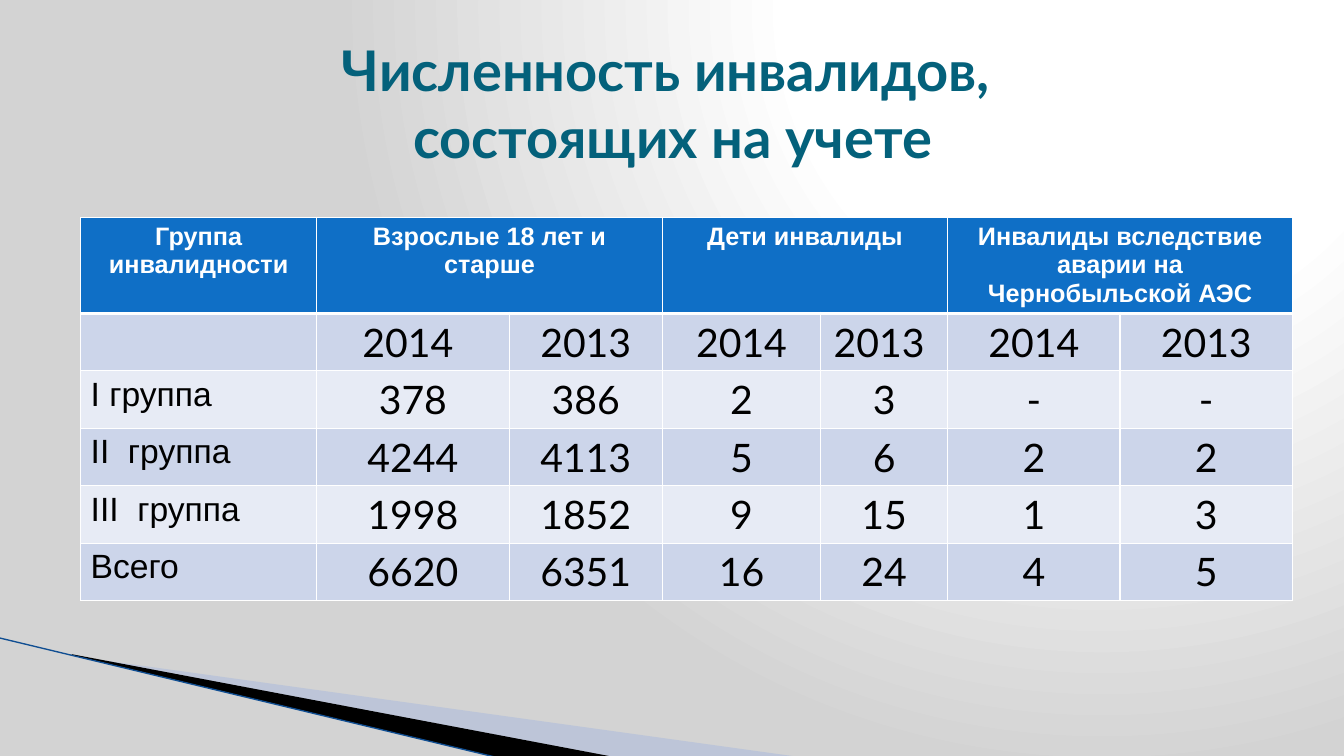
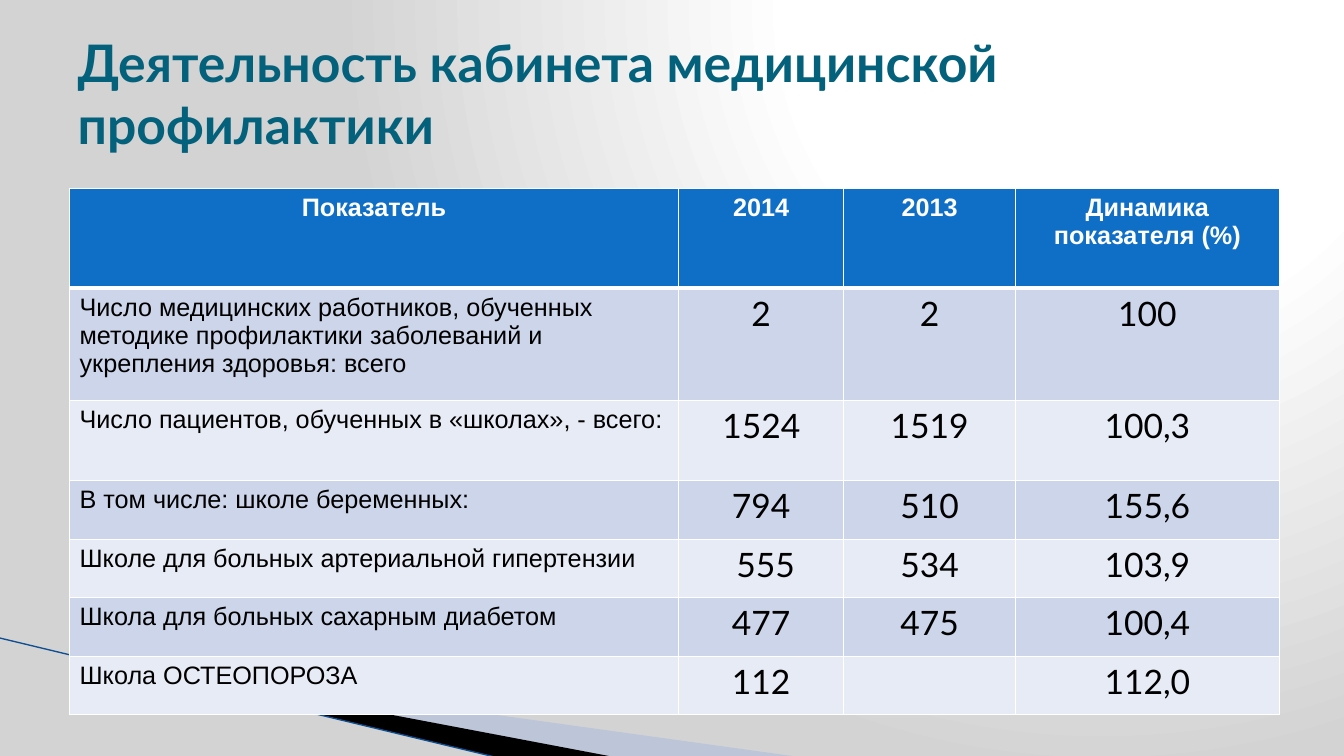
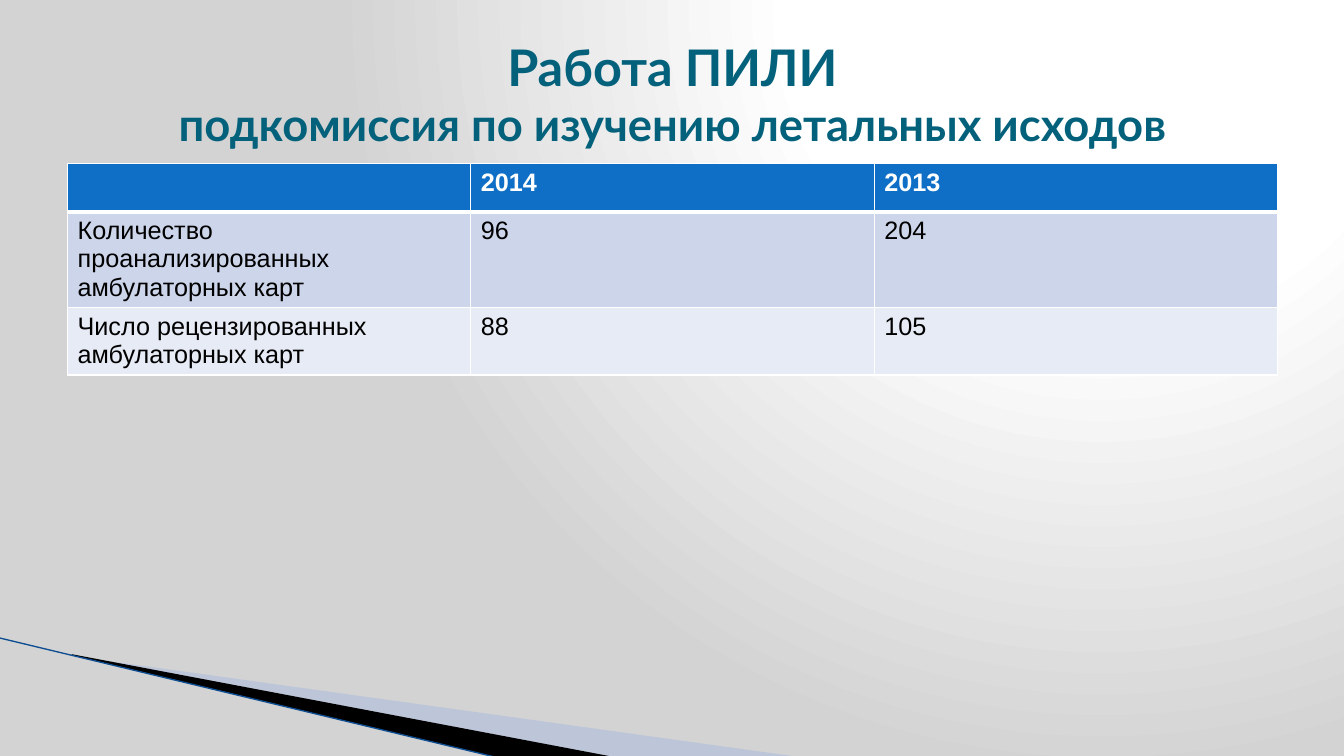
from lxml import etree
from pptx import Presentation
from pptx.dml.color import RGBColor
from pptx.enum.shapes import MSO_CONNECTOR
from pptx.enum.text import MSO_ANCHOR, MSO_AUTO_SIZE, PP_ALIGN
from pptx.oxml import parse_xml
from pptx.oxml.ns import nsdecls, qn
from pptx.util import Inches, Pt

LEFT, CENTER = PP_ALIGN.LEFT, PP_ALIGN.CENTER
MIDDLE = MSO_ANCHOR.MIDDLE
NO_FIT = MSO_AUTO_SIZE.NONE
STRAIGHT = MSO_CONNECTOR.STRAIGHT

HEADING, BODY = "Lato", "Arial"
TEAL, BLUE, BLACK, WHITE = "04617B", "0F6FC6", "000000", "FFFFFF"
PALE_BLUE, LINE_BLUE, GREY = "9DB2E1", "104E92", "D3D3D3"
BANDS = ["CCD5EA", "E7EBF5"]
TITLE_ONLY = 5


def rgb(color):
    return RGBColor.from_string(color)


def text_format(size, name=BODY, color=BLACK, bold=False):
    return {"size": Pt(size), "name": name, "color": color, "bold": bold}


def set_font(font, fmt):
    for key, value in fmt.items():
        if key == "color":
            font.color.rgb = rgb(value)
        else:
            setattr(font, key, value)


HEADER = text_format(18, color=WHITE, bold=True)
LABEL = text_format(18)


class Deck:
    """Shared style and the slide being built."""

    def __init__(self):
        self.prs = Presentation()
        self.prs.slide_width = Inches(13.33)
        self.prs.slide_height = Inches(7.5)
        self.layout = self.prs.slide_layouts[TITLE_ONLY]
        self.s = None
        self.background()

    def background(self):
        master = self.prs.slide_master
        master.background.fill.solid()
        solid = master.element.find(".//" + qn("p:bgPr") + "/" + qn("a:solidFill"))
        stops = "".join(
            f'<a:gs pos="{pos * 1000}"><a:srgbClr val="{color}"/></a:gs>'
            for pos, color in [(0, WHITE), (40, WHITE), (100, GREY)])
        gradient = parse_xml(
            f'<a:gradFill {nsdecls("a")} rotWithShape="1"><a:gsLst>{stops}</a:gsLst>'
            '<a:path path="circle"><a:fillToRect l="65000" b="98000"/></a:path>'
            '</a:gradFill>')
        solid.getparent().replace(solid, gradient)

    def slide(self, title_lines, title_height, align=CENTER):
        first = self.s is None
        self.s = self.prs.slides.add_slide(self.layout)
        if first:
            self.corner()
        self.title(title_lines, title_height, align)

    def title(self, lines, height, align):
        sp = self.s.shapes.title
        box = {"left": 0.67, "top": 0.3, "width": 12, "height": height}
        for key, value in box.items():
            setattr(sp, key, Inches(value))
        tf = sp.text_frame
        tf.word_wrap, tf.auto_size, tf.vertical_anchor = True, NO_FIT, MIDDLE
        p = tf.paragraphs[0]
        p.alignment = align
        for i, (text, size) in enumerate(lines):
            if i:
                p.add_line_break()
            r = p.add_run()
            r.text = text
            set_font(r.font, text_format(size, HEADING, TEAL, True))

    # Corner decoration, kept in the layout so that every slide shows it
    def corner(self):
        pale = self.wedge([(0.73, 6.51), (7.93, 7.51), (6.08, 7.51), (0.73, 6.5)],
                          PALE_BLUE, 40)
        dark = self.wedge([(0.71, 6.49), (6.09, 7.51), (4.96, 7.52), (0.72, 6.5)],
                          BLACK)
        edge = self.line((0, 6.33), (4.95, 7.52), LINE_BLUE, 0.95)
        tree = self.layout.element.cSld.spTree
        for number, sp in enumerate([pale, dark, edge], 101):
            sp.element.find(".//" + qn("p:cNvPr")).set("id", str(number))
            tree.append(sp.element)

    def wedge(self, points, color, opacity=100):
        points = [(Inches(x), Inches(y)) for x, y in points]
        builder = self.s.shapes.build_freeform(*points[0])
        builder.add_line_segments(points[1:], close=True)
        sp = builder.convert_to_shape()
        sp.shadow.inherit = False
        sp.line.fill.background()
        sp.fill.solid()
        sp.fill.fore_color.rgb = rgb(color)
        if opacity < 100:
            clr = sp.element.spPr.find(".//" + qn("a:srgbClr"))
            etree.SubElement(clr, qn("a:alpha")).set("val", str(opacity * 1000))
        return sp

    def line(self, start, end, color, width):
        ends = [Inches(v) for v in (*start, *end)]
        line = self.s.shapes.add_connector(STRAIGHT, *ends)
        line.line.color.rgb = rgb(color)
        line.line.width = Pt(width)
        etree.SubElement(line.element.spPr, qn("a:effectLst"))
        return line

    def table(self, left, top, widths, heights, rows, label=LABEL, value=LABEL,
              header_align=CENTER, value_align=CENTER):
        """None in a row joins the cell to the one on its left."""
        frame = self.s.shapes.add_table(
            len(rows), len(widths), Inches(left), Inches(top),
            Inches(sum(widths)), Inches(sum(heights)))
        table = frame.table
        for column, width in zip(table.columns, widths):
            column.width = Inches(width)
        for row, height in zip(table.rows, heights):
            row.height = Inches(height)
        for i, row in enumerate(rows):
            for j, text in enumerate(row):
                cell = table.cell(i, j)
                if i == 0:
                    fmt, align, fill = HEADER, header_align, BLUE
                else:
                    fmt, align = (value, value_align) if j else (label, LEFT)
                    fill = BANDS[(i - 1) % 2]
                self.cell(cell, fill, 3 if i == 0 else 1, 3 if i == 1 else 1)
                if text is None:
                    table.cell(i, j - 1).merge(cell)
                elif text:
                    p = cell.text_frame.paragraphs[0]
                    p.alignment = align
                    r = p.add_run()
                    r.text = text
                    set_font(r.font, fmt)

    def cell(self, cell, fill, bottom, top):
        tcPr = cell._tc.get_or_add_tcPr()
        for side, width in {"L": 1, "R": 1, "T": top, "B": bottom}.items():
            tcPr.append(parse_xml(
                f'<a:ln{side} {nsdecls("a")} w="{Pt(width)}"><a:solidFill>'
                f'<a:srgbClr val="{WHITE}"/></a:solidFill></a:ln{side}>'))
        cell.fill.solid()
        cell.fill.fore_color.rgb = rgb(fill)


def main():
    deck = Deck()

    # Registered people by disability group
    deck.slide([("Численность инвалидов, ", 40), ("состоящих на учете", 40)], 1.43)
    deck.table(
        0.8, 2.16, [2.34, 1.91, 1.52, 1.57, 1.26, 1.71, 1.71], [0.95] + [0.57] * 5,
        [["Группа инвалидности", "Взрослые 18 лет и старше", None,
          "Дети инвалиды", None,
          "Инвалиды вследствие аварии на Чернобыльской АЭС", None],
         ["", "2014 ", "2013", "2014", "2013 ", "2014", "2013"],
         ["I группа", "378", "386", "2", "3", "-", "-"],
         ["II  группа", "4244", "4113", "5", "6", "2", "2"],
         ["III  группа", "1998", "1852", "9", "15", "1", "3"],
         ["Всего", "6620", "6351", "16", "24", "4", "5"]],
        label=text_format(24), value=text_format(28, HEADING))

    # Preventive care office
    deck.slide([("Деятельность кабинета медицинской профилактики", 36.9)], 1.25, LEFT)
    deck.table(
        0.69, 1.87, [6.04, 1.64, 1.7, 2.62], [0.99, 1.11, 0.8] + [0.58] * 4,
        [["Показатель", "2014", "2013", "Динамика показателя (%)"],
         ["Число медицинских работников, обученных методике профилактики "
          "заболеваний и укрепления здоровья: всего", "2", "2", "100"],
         ["Число пациентов, обученных в «школах», - всего:", "1524", "1519", "100,3"],
         ["В том числе: школе беременных:", "794", "510", "155,6"],
         ["Школе для больных артериальной гипертензии", " 555", "534", "103,9"],
         ["Школа для больных сахарным диабетом", "477", "475", "100,4"],
         ["Школа ОСТЕОПОРОЗА", "112", "", "112,0"]],
        value=text_format(24, HEADING))

    # Review subcommittee
    deck.slide([("Работа ПИЛИ", 36),
                ("подкомиссия по изучению летальных исходов", 32.4)], 1.25)
    deck.table(
        0.67, 1.62, [4] * 3, [0.48, 0.95, 0.67],
        [["", "2014", "2013"],
         ["Количество проанализированных амбулаторных карт", "96", "204"],
         ["Число рецензированных амбулаторных карт", "88", "105"]],
        header_align=LEFT, value_align=LEFT)

    deck.prs.save("out.pptx")


if __name__ == "__main__":
    main()
